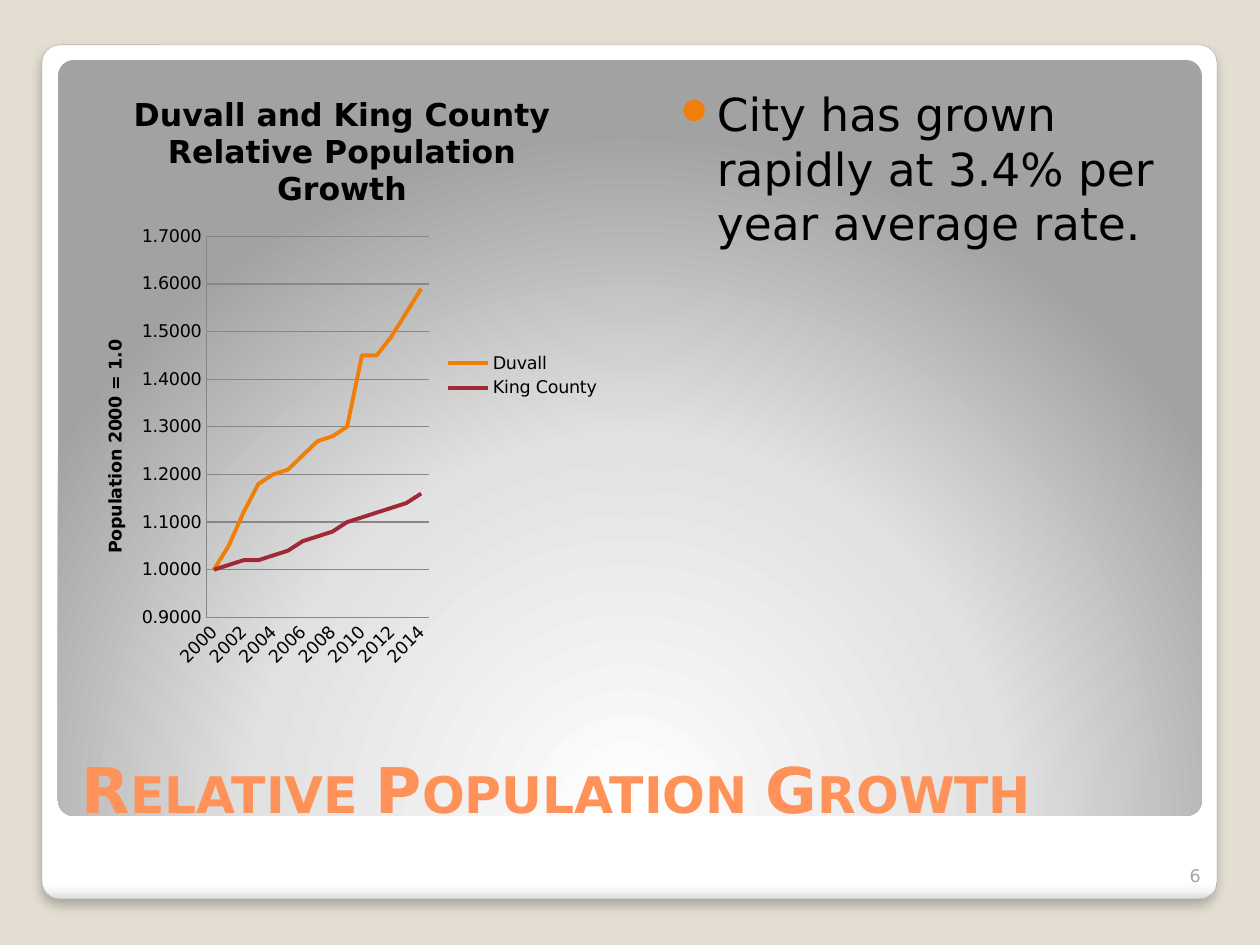
from lxml.etree import SubElement
from pptx import Presentation
from pptx.chart.data import CategoryChartData
from pptx.dml.color import RGBColor
from pptx.enum.chart import XL_CHART_TYPE, XL_LEGEND_POSITION, XL_TICK_MARK
from pptx.enum.shapes import MSO_SHAPE
from pptx.enum.text import MSO_ANCHOR, PP_ALIGN
from pptx.oxml import parse_xml
from pptx.oxml.ns import nsdecls, qn
from pptx.util import Emu, Pt

EMU_PER_PX = 914400 / 126
FONT = "DejaVu Sans"
BLACK = RGBColor(0x00, 0x00, 0x00)
BEIGE = RGBColor(0xE3, 0xDE, 0xD1)
FRAME_LINE = RGBColor(0xA4, 0xA4, 0xA4)
GRID_GRAY = RGBColor(0x87, 0x87, 0x87)
NUMBER_GRAY = RGBColor(0xA8, 0xA4, 0x9B)
CORAL = RGBColor(0xFF, 0x92, 0x58)
ORANGE = RGBColor(0xF0, 0x7F, 0x09)
RED = RGBColor(0x9F, 0x29, 0x36)

YEARS = [str(year) for year in range(2000, 2015)]
POPULATION = [
    ("Duvall", ORANGE, [1, 1.05, 1.12, 1.18, 1.2, 1.21, 1.24, 1.27, 1.28, 1.3,
                        1.45, 1.45, 1.49, 1.54, 1.59]),
    ("King County", RED, [1, 1.01, 1.02, 1.02, 1.03, 1.04, 1.06, 1.07, 1.08, 1.1,
                          1.11, 1.12, 1.13, 1.14, 1.16]),
]
VERTICAL = '<a:lin ang="5400000" scaled="0"/>'
RADIAL = ('<a:path path="circle">'
          '<a:fillToRect l="50000" t="175000" r="50000" b="-75000"/></a:path>')


def px(length):
    return Emu(round(length * EMU_PER_PX))


def place(*lengths):
    return [px(length) for length in lengths]


def set_font(font, size, color, bold=False):
    font.name = FONT
    font.size = Pt(size)
    font.bold = bold
    font.color.rgb = color


def add_panel(slide, position, stops, direction):
    """Add a rounded panel with gradient stops given as (percent, hex colour)."""
    panel = slide.shapes.add_shape(MSO_SHAPE.ROUNDED_RECTANGLE, *place(*position))
    panel.adjustments[0] = 0.021
    panel.shadow.inherit = False
    panel.line.fill.background()
    stop_xml = "".join(
        f'<a:gs pos="{percent * 1000}"><a:srgbClr val="{color}"/></a:gs>'
        for percent, color in stops)
    gradient = parse_xml(f'<a:gradFill {nsdecls("a")} rotWithShape="1">'
                         f'<a:gsLst>{stop_xml}</a:gsLst>{direction}</a:gradFill>')
    panel._element.spPr.find(qn("a:prstGeom")).addnext(gradient)
    return panel


def add_drop_shadow(shape):
    effects = shape._element.spPr.find(qn("a:effectLst"))
    effects.append(parse_xml(
        f'<a:outerShdw {nsdecls("a")} blurRad="{Pt(6)}" dist="{Pt(4)}" dir="5400000" '
        'algn="tl" rotWithShape="0"><a:srgbClr val="000000">'
        '<a:alpha val="25000"/></a:srgbClr></a:outerShdw>'))


def add_text(slide, position, text, size, color):
    box = slide.shapes.add_textbox(*place(*position))
    box.text_frame.word_wrap = True
    para = box.text_frame.paragraphs[0]
    para.text = text
    set_font(para.font, size, color)
    return box


def add_bullet(para, color, indent):
    properties = para._p.get_or_add_pPr()
    properties.set("marL", str(px(indent)))
    properties.set("indent", str(-px(indent)))
    bullet_color = SubElement(properties, qn("a:buClr"))
    SubElement(bullet_color, qn("a:srgbClr"), val=str(color))
    SubElement(properties, qn("a:buSzPct"), val="80000")
    SubElement(properties, qn("a:buChar"), char="●")


def set_title(slide, position, text):
    title = slide.shapes.title
    title.left, title.top, title.width, title.height = place(*position)
    title.text_frame.vertical_anchor = MSO_ANCHOR.BOTTOM
    para = title.text_frame.paragraphs[0]
    para.text = text
    para.alignment = PP_ALIGN.LEFT
    set_font(para.font, 36, CORAL, bold=True)
    para.runs[0].font._element.set("cap", "small")


def set_chart_text(title, lines, size):
    frame = title.text_frame
    frame.text = "\n".join(lines)
    for para in frame.paragraphs:
        set_font(para.font, size, BLACK, bold=True)


def set_plot_area(chart, **fractions):
    """Fix the inner plot area as fractions of the chart."""
    plot_area = chart._chartSpace.chart.plotArea
    for old_layout in plot_area.findall(qn("c:layout")):
        plot_area.remove(old_layout)
    values = "".join(f'<c:{key} val="{value}"/>' for key, value in fractions.items())
    plot_area.insert(0, parse_xml(
        f'<c:layout {nsdecls("c")}><c:manualLayout><c:layoutTarget val="inner"/>'
        f'<c:xMode val="edge"/><c:yMode val="edge"/>{values}'
        '</c:manualLayout></c:layout>'))


def style_axis(axis):
    axis.major_tick_mark = XL_TICK_MARK.NONE
    axis.minor_tick_mark = XL_TICK_MARK.NONE
    axis.format.line.color.rgb = GRID_GRAY
    axis.format.line.width = Pt(0.75)
    set_font(axis.tick_labels.font, 10, BLACK)


def add_growth_chart(slide, position):
    data = CategoryChartData(number_format="0.00")
    data.categories = YEARS
    for name, _, values in POPULATION:
        data.add_series(name, values)
    chart = slide.shapes.add_chart(XL_CHART_TYPE.LINE, *place(*position), data).chart
    set_font(chart.font, 10, BLACK)
    set_chart_text(chart.chart_title,
                   ["Duvall and King County", "Relative Population Growth"], 18)
    chart.has_legend = True
    chart.legend.position = XL_LEGEND_POSITION.RIGHT
    chart.legend.include_in_layout = False
    chart.plots[0].vary_by_categories = False
    for series, (_, color, _) in zip(chart.plots[0].series, POPULATION):
        series.smooth = False
        series.format.line.color.rgb = color
        series.format.line.width = Pt(2.25)

    years, growth = chart.category_axis, chart.value_axis
    for axis in (years, growth):
        style_axis(axis)
    years._element.txPr.bodyPr.set("rot", "-2700000")
    growth.minimum_scale, growth.maximum_scale, growth.major_unit = 0.9, 1.7, 0.1
    growth.tick_labels.number_format = "#,##0.0000"
    growth.tick_labels.number_format_is_linked = False
    growth.major_gridlines.format.line.color.rgb = GRID_GRAY
    growth.major_gridlines.format.line.width = Pt(0.75)
    set_chart_text(growth.axis_title, ["Population 2000 = 1.0"], 10)
    set_plot_area(chart, x=0.25, y=0.27, w=0.41, h=0.63)


def main():
    deck = Presentation()
    deck.slide_width, deck.slide_height = place(1260, 945)
    slide = deck.slides.add_slide(deck.slide_layouts[5])
    slide.background.fill.solid()
    slide.background.fill.fore_color.rgb = BEIGE

    frame = add_panel(slide, (42, 45, 1175, 854),
                      [(0, "FFFFFF"), (98, "FFFFFF"), (99, "F7F7F7"), (100, "DADADA")],
                      VERTICAL)
    frame.line.color.rgb = FRAME_LINE
    frame.line.width = Pt(0.16)
    add_drop_shadow(frame)
    add_panel(slide, (58, 60, 1144, 756),
              [(0, "FFFFFF"), (55, "E1E1E1"), (100, "A2A2A2")], RADIAL)

    title = slide.shapes.title._element
    title.getparent().append(title)
    set_title(slide, (69, 687, 1128, 145), "Relative Population Growth")

    body = add_text(slide, (655, 73, 542, 605),
                    "City has grown rapidly at 3.4% per year average rate.", 26, BLACK)
    body.text_frame.margin_left, body.text_frame.margin_top = place(25, 13)
    body.text_frame.paragraphs[0].space_before = Pt(2.5)
    add_bullet(body.text_frame.paragraphs[0], ORANGE, 37)

    number = add_text(slide, (1150, 842, 63, 50), "6", 10, NUMBER_GRAY)
    number.text_frame.vertical_anchor = MSO_ANCHOR.BOTTOM
    number.text_frame.paragraphs[0].alignment = PP_ALIGN.RIGHT

    add_growth_chart(slide, (71, 73, 542, 605))
    deck.save("out.pptx")


if __name__ == "__main__":
    main()
